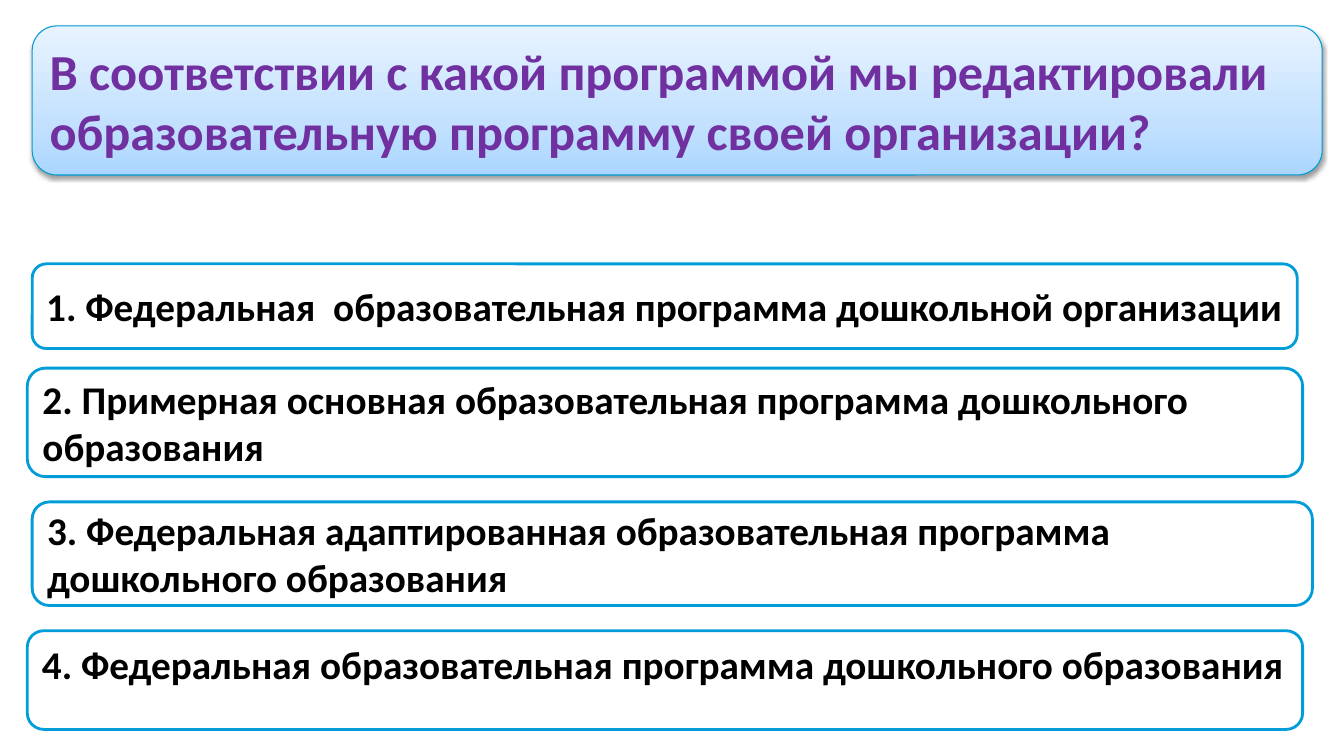
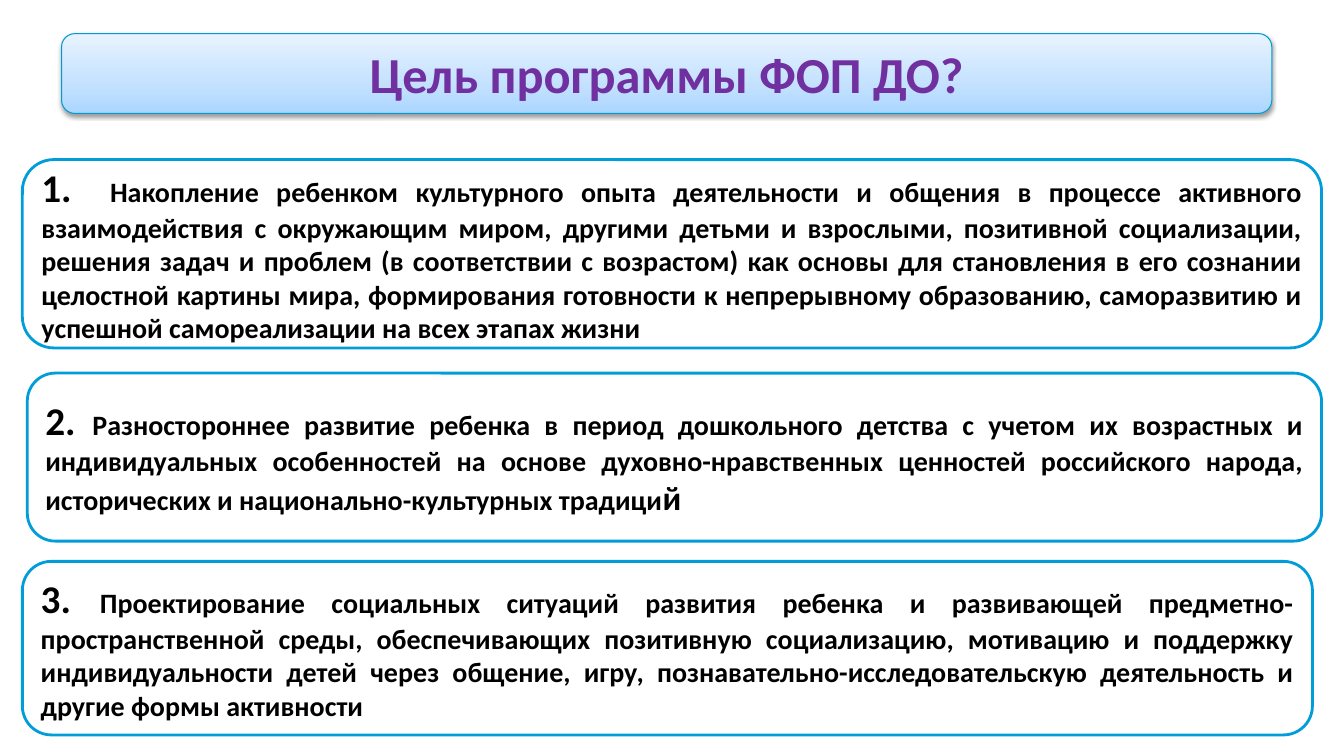
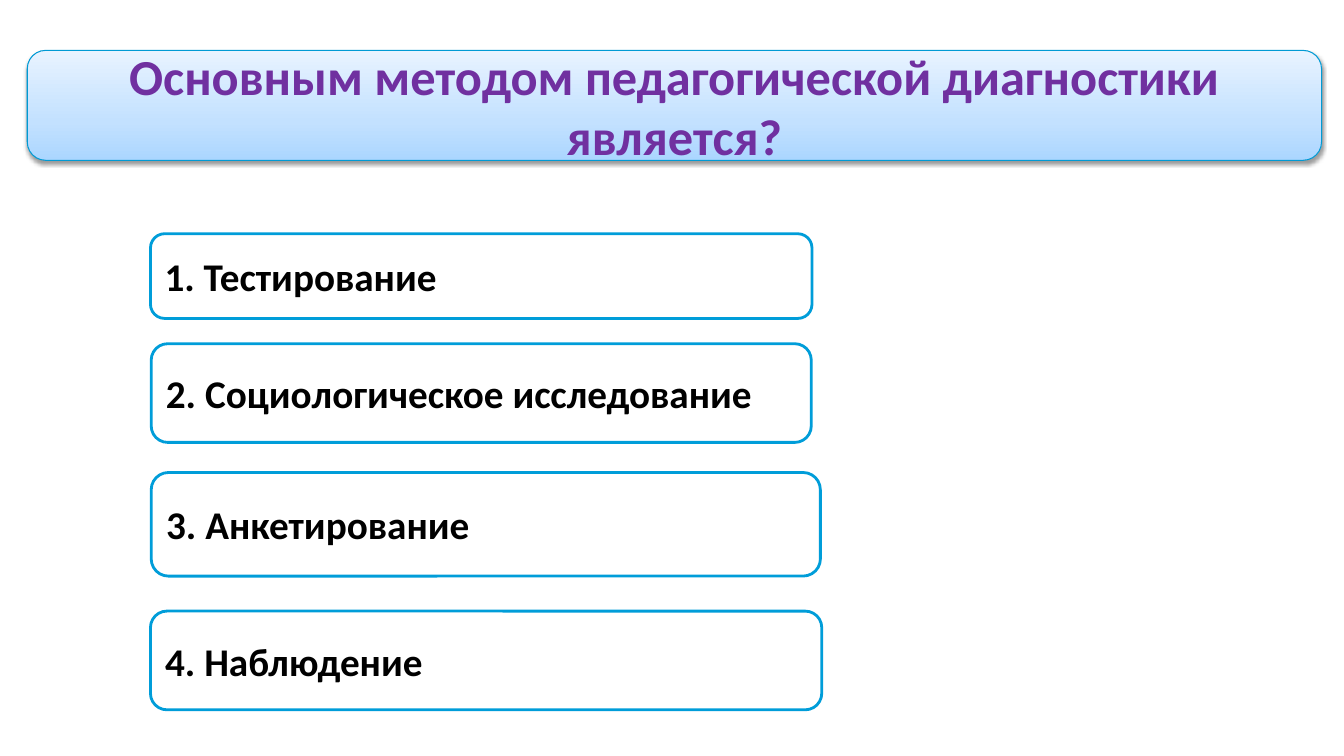
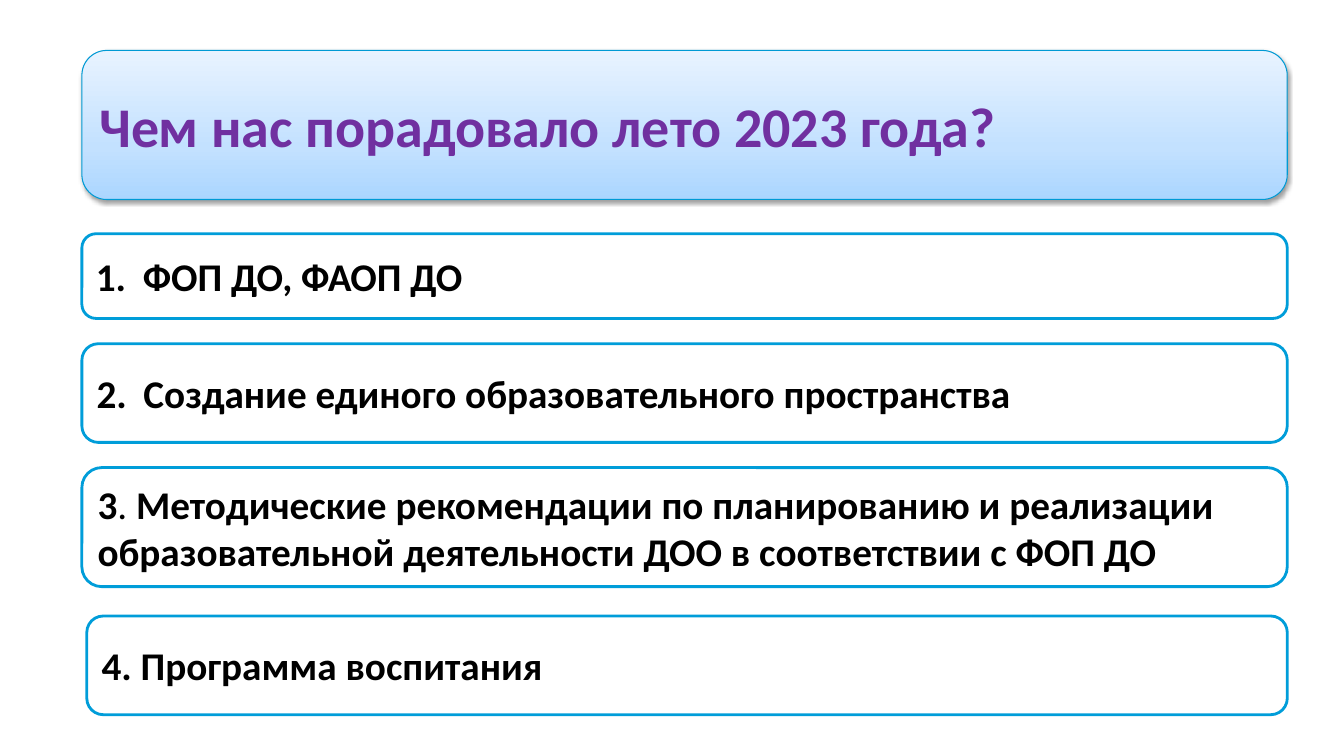
"""Build a four-slide quiz about the federal preschool programme."""
from lxml import etree
from pptx import Presentation, util as u
from pptx.dml.color import RGBColor
from pptx.enum import shapes, text
from pptx.oxml import ns

Pt = u.Pt
AL, MID = text.PP_ALIGN, text.MSO_ANCHOR.MIDDLE
KIND = shapes.MSO_SHAPE.FLOWCHART_ALTERNATE_PROCESS
HEX = {"head": "7030A0", "text": "000000", "fill": "FFFFFF",
       "edge": "009DD9", "rim": "009AD4", "shade": "000000"}
STOPS = [(0, "ABD6FF"), (35, "C3E1FF"), (100, "E8F3FF")]
FRAME = {"word_wrap": True, "auto_size": text.MSO_AUTO_SIZE.NONE,
         "vertical_anchor": MID}
FONT = {"name": "Calibri", "bold": True}
INSET = 0.0488

QUIZ = [
    {"title": "В соответствии с какой программой мы редактировали образовательную программу своей организации?",
     "band": (23, 18.5, 921.5, 106.5), "size": 36, "align": AL.LEFT,
     "items": [
         ((23, 188.5, 903.6, 60.5), [("1. Федеральная  образовательная программа дошкольной организации", 28)], {}),
         ((19.5, 263, 911, 77.5), [("2. Примерная основная образовательная программа дошкольного образования", 28)], {}),
         ((23, 358.5, 914.5, 74), [("3. Федеральная адаптированная образовательная программа дошкольного образования", 28)], {}),
         ((19.5, 450.5, 911, 70.5), [("4. Федеральная образовательная программа дошкольного образования", 28)],
          {"anchor": text.MSO_ANCHOR.TOP})]},
    {"title": "Цель программы ФОП ДО?",
     "band": (44, 24, 864.5, 57), "size": 36, "align": AL.CENTER,
     "items": [
         ((16, 114, 928, 134.5), [
             ("1.\t", 28),
             ("Накопление ребенком культурного опыта деятельности и общения в процессе активного взаимодействия с окружающим миром, другими детьми и взрослыми, позитивной социализации, решения задач и проблем (в соответствии с возрастом) как основы для становления в его сознании целостной картины мира, формирования готовности к непрерывному образованию, саморазвитию и успешной самореализации на всех этапах жизни", 20)],
          {"align": AL.JUSTIFY, "tab": 49}),
         ((19.5, 266.5, 924.5, 120), [
             ("2. ", 28),
             ("Разностороннее развитие ребенка в период дошкольного детства с учетом их возрастных и индивидуальных особенностей на основе духовно-нравственных ценностей российского народа, исторических и национально-культурных традици", 20),
             ("й", 24)], {"align": AL.JUSTIFY}),
         ((16, 401, 921.5, 124), [
             ("3. ", 28),
             ("Проектирование социальных ситуаций развития ребенка и развивающей предметно-пространственной среды, обеспечивающих позитивную социализацию, мотивацию и поддержку индивидуальности детей через общение, игру, познавательно-исследовательскую деятельность и другие формы активности", 20)],
          {"align": AL.JUSTIFY})]},
    {"title": "Основным методом педагогической диагностики является?",
     "band": (19.5, 36, 924.5, 78.5), "size": 36, "align": AL.CENTER,
     "items": [
         ((107.5, 167, 472.5, 60.5), [("1. Тестирование", 28)], {}),
         ((108, 245.5, 471.5, 70.5), [("2. Социологическое исследование", 28)], {}),
         ((108, 337.5, 478, 74), [("3. Анкетирование", 28)], {}),
         ((107.5, 436.5, 479.5, 70.5), [("4. Наблюдение", 28)], {})]},
    {"title": "Чем нас порадовало лето 2023 года?",
     "band": (58.5, 36, 861, 106.5), "size": 40, "align": AL.LEFT,
     "items": [
         ((58.5, 167, 861, 60.5), [("1.\tФОП ДО, ФАОП ДО", 28)], {"tab": 33.5}),
         ((58.5, 245.5, 861, 70.5), [("2.\tСоздание единого образовательного пространства", 28)], {"tab": 33.5}),
         ((58.5, 334, 861, 85), [
             ("3", 28), (". ", 28, False),
             ("Методические рекомендации по планированию и реализации образовательной деятельности ДОО в соответствии с ФОП ДО", 28)], {}),
         ((62, 440, 857.5, 70.5), [("4. Программа воспитания", 28)], {})]},
]


def put(obj, vals):
    for key, val in vals.items():
        setattr(obj, key, val)


def panel(page, box, edge, width):
    form = page.shapes.add_shape(KIND, *map(Pt, box))
    form.shadow.inherit = False
    form.fill.solid()
    form.fill.fore_color.rgb = RGBColor.from_string(HEX["fill"])
    form.line.color.rgb = RGBColor.from_string(HEX[edge])
    form.line.width = Pt(width)
    return form


deck = Presentation()
put(deck, {"slide_width": Pt(960), "slide_height": Pt(540)})

for quiz in QUIZ:
    page = deck.slides.add_slide(deck.slide_layouts[5])
    box = quiz["band"]

    band = panel(page, box, "rim", 0.75)
    band.fill.gradient()
    band.fill.gradient_angle = 90
    props = band._element.spPr
    stops = props.find(".//" + ns.qn("a:gsLst"))
    stops.clear()
    for pos, tint in STOPS:
        stop = etree.SubElement(stops, ns.qn("a:gs"), pos=str(pos * 1000))
        etree.SubElement(stop, ns.qn("a:srgbClr"), val=tint)
    shade = etree.SubElement(
        props.find(ns.qn("a:effectLst")), ns.qn("a:outerShdw"),
        blurRad=str(Pt(3.1)), dist=str(Pt(1.6)), dir="5400000", rotWithShape="0")
    tone = etree.SubElement(shade, ns.qn("a:srgbClr"), val=HEX["shade"])
    etree.SubElement(tone, ns.qn("a:alpha"), val="38000")

    title = page.shapes.title
    page.shapes._spTree.append(title._element)
    put(title, dict(zip(("left", "top", "width", "height"), map(Pt, box))))
    title.text = quiz["title"]
    side = Pt(7.2 + box[3] * INSET)
    put(title.text_frame, {**FRAME, "margin_left": side, "margin_right": side})
    para = title.text_frame.paragraphs[0]
    para.alignment = quiz["align"]
    put(para.runs[0].font, {**FONT, "size": Pt(quiz["size"])})
    para.runs[0].font.color.rgb = RGBColor.from_string(HEX["head"])

    for box, runs, opts in quiz["items"]:
        card = panel(page, box, "edge", 2)
        put(card.text_frame, {**FRAME, "vertical_anchor": opts.get("anchor", MID)})
        para = card.text_frame.paragraphs[0]
        para.alignment = opts.get("align", AL.LEFT)
        if "tab" in opts:
            tabs = etree.SubElement(para._p.get_or_add_pPr(), ns.qn("a:tabLst"))
            etree.SubElement(tabs, ns.qn("a:tab"), pos=str(Pt(opts["tab"])), algn="l")
        for words, size, *bold in runs:
            run = para.add_run()
            run.text = words
            put(run.font, {**FONT, "size": Pt(size), "bold": not bold})
            run.font.color.rgb = RGBColor.from_string(HEX["text"])

deck.save("out.pptx")
